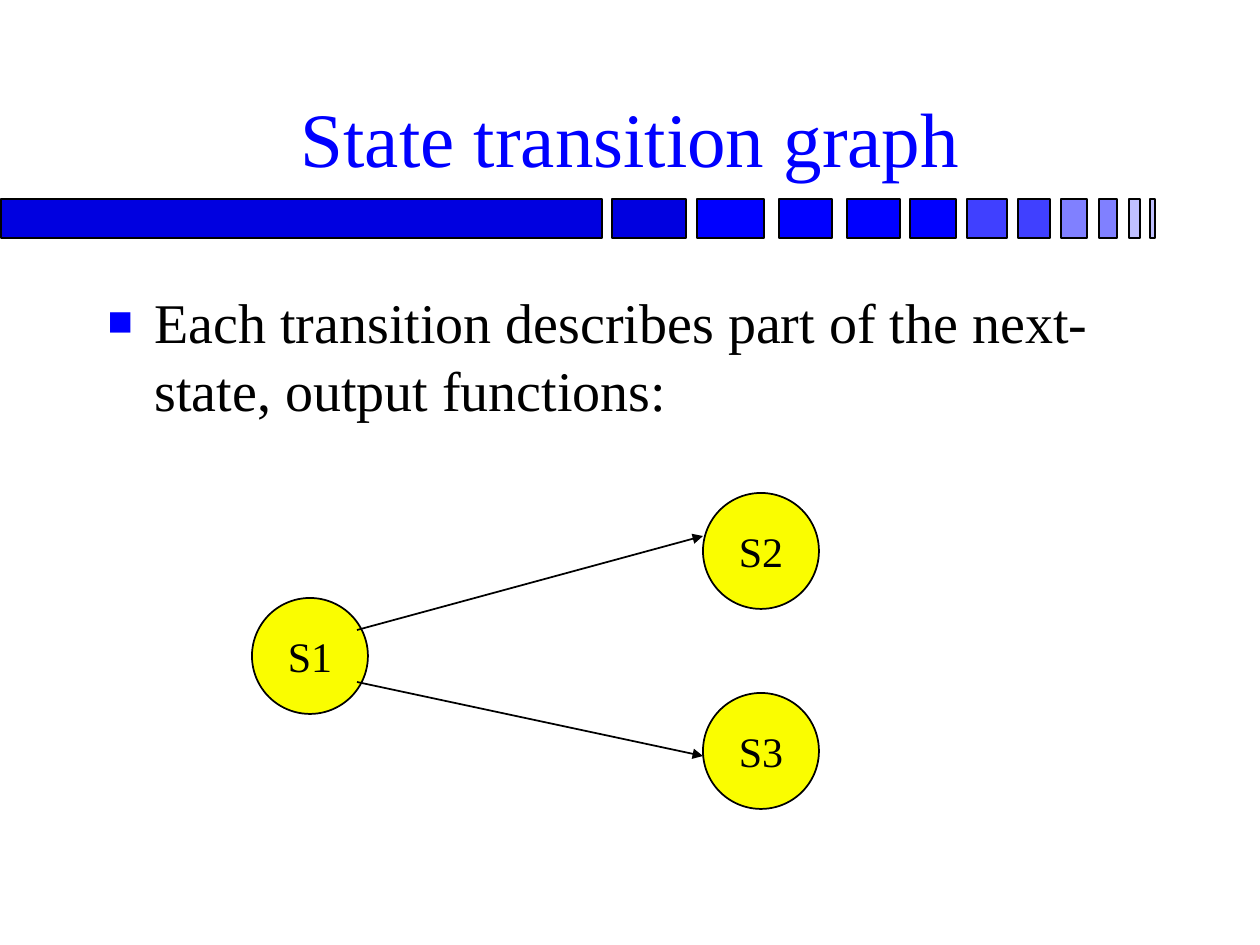
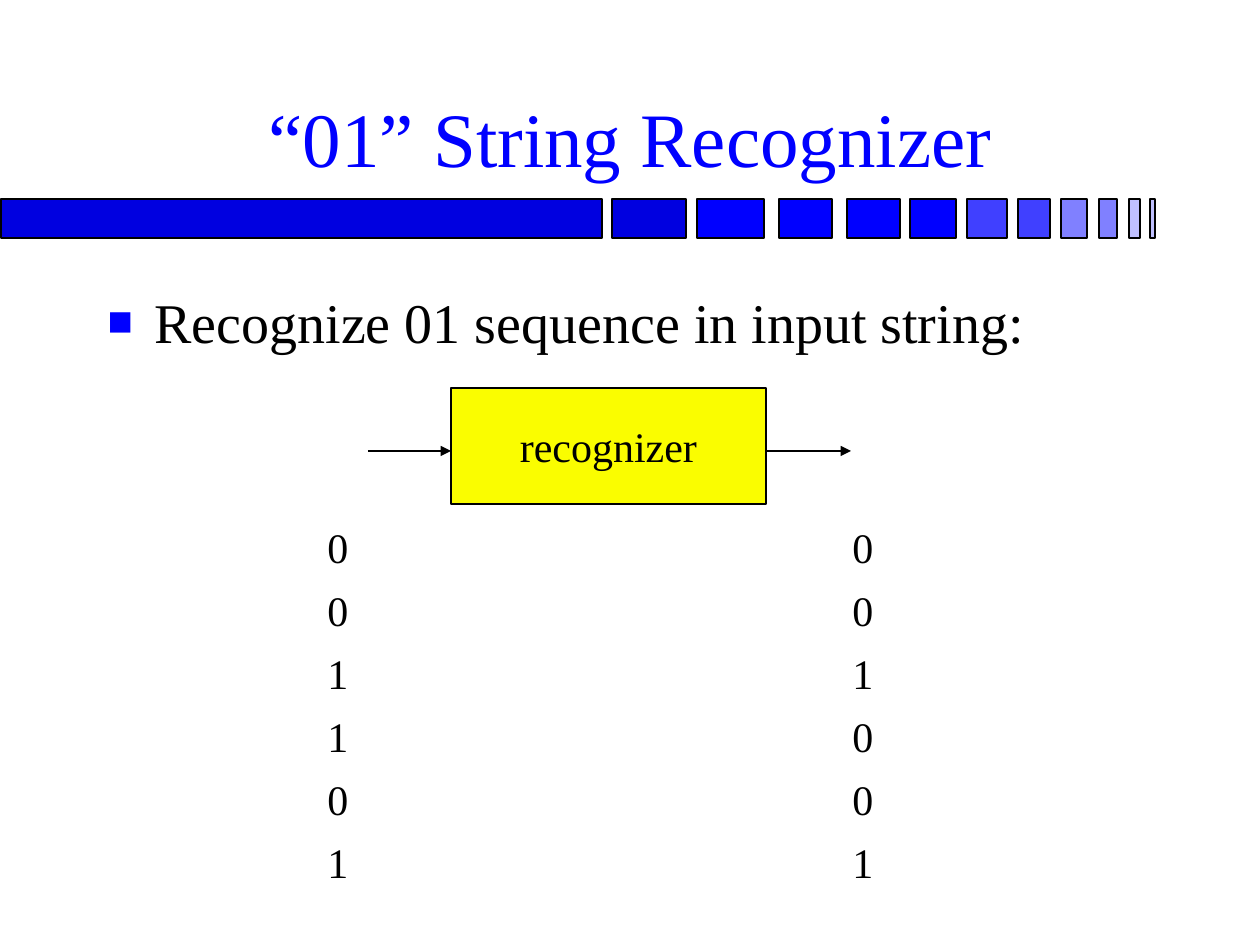
import pptx
import pptx.util
import pptx.dml.color
import pptx.enum.shapes
import pptx.enum.text
import pptx.oxml
import pptx.oxml.ns

FONT = "Times New Roman"
HEX = {"title": "0000FF", "text": "000000", "line": "000000", "node": "FAFD00",
       "navy": "0000E0", "blue": "0000FF", "mid": "4040FF", "soft": "8080FF", "pale": "C0C0FF"}
SIZE = {"title": 44, "body": 32, "label": 24}
BAND = (199, 39)
BARS = [(1, 601, "navy"), (612, 74, "navy"), (697, 67, "blue"), (779, 53, "blue"),
        (847, 53, "blue"), (910, 46, "blue"), (967, 40, "mid"), (1018, 32, "mid"),
        (1061, 26, "soft"), (1099, 18, "soft"), (1129, 11, "pale"), (1150, 5, "pale")]

GRAPH = {
    "title": "State transition graph",
    "body": ("Each transition describes part of the next-state, output functions:", 168),
    "nodes": [("OVAL", "S1", 252, 598, 116, 116), ("OVAL", "S2", 703, 493, 116, 116),
              ("OVAL", "S3", 703, 693, 116, 116)],
    "arrows": [(357, 630, 703, 536), (357, 682, 703, 756)],
    "bits": [],
}
STRING = {
    "title": "“01” String Recognizer",
    "body": ("Recognize 01 sequence in input string:", 94),
    "nodes": [("RECTANGLE", "recognizer", 451, 388, 315, 116)],
    "arrows": [(368, 451, 451, 451), (766, 451, 851, 451)],
    "bits": [(315, "001101"), (840, "001001")],
}
BIT_TOP, BIT_STEP, BIT_WIDE = 515, 63, 47

SHAPE = pptx.enum.shapes.MSO_SHAPE
ALIGN = pptx.enum.text.PP_ALIGN
ANCHOR = pptx.enum.text.MSO_ANCHOR
FIT = pptx.enum.text.MSO_AUTO_SIZE


def px(*nums):
    return [pptx.util.Emu(round(n * 914400 / 126)) for n in nums]


def rgb(name):
    return pptx.dml.color.RGBColor.from_string(HEX[name])


def tag(name, **attrs):
    node = pptx.oxml.parse_xml(f"<a:{name} {pptx.oxml.ns.nsdecls('a')}/>")
    for key, val in attrs.items():
        node.set(key, val)
    return node


def place(shape, *box):
    shape.left, shape.top, shape.width, shape.height = px(*box)


def write(shape, text, size, color="text", align=ALIGN.LEFT, anchor=ANCHOR.TOP, wrap=True):
    frame = shape.text_frame
    frame.auto_size = FIT.NONE
    frame.word_wrap = wrap
    frame.vertical_anchor = anchor
    para = frame.paragraphs[0]
    para.alignment = align
    para.space_before = pptx.util.Pt(0)
    run = para.add_run()
    run.text = text
    run.font.name = FONT
    run.font.size = pptx.util.Pt(SIZE[size])
    run.font.color.rgb = rgb(color)
    return para


def add_block(shapes, kind, fill, *box):
    shape = shapes.add_shape(kind, *px(*box))
    shape.shadow.inherit = False
    shape.fill.solid()
    shape.fill.fore_color.rgb = rgb(fill)
    shape.line.color.rgb = rgb("line")
    shape.line.width = pptx.util.Pt(1)
    return shape


def add_band(slide):
    group = slide.shapes.add_group_shape()
    top, high = BAND
    for left, wide, fill in BARS:
        add_block(group.shapes, SHAPE.RECTANGLE, fill, left, top, wide, high)


def add_body(shape, text, high):
    place(shape, 95, 273, 1071, high)
    para = write(shape, text, "body")
    shape.text_frame.margin_top = px(15)[0]
    props = para._p.get_or_add_pPr()
    hang = px(47)[0]
    props.set("marL", str(hang))
    props.set("indent", str(-hang))
    color = tag("buClr")
    color.append(tag("srgbClr", val=HEX["title"]))
    for node in (color, tag("buSzPct", val="75000"), tag("buFont", typeface=FONT),
                 tag("buChar", char="■")):
        props.append(node)


def add_arrow(slide, *ends):
    line = slide.shapes.add_connector(pptx.enum.shapes.MSO_CONNECTOR.STRAIGHT, *px(*ends))
    line.line.color.rgb = rgb("line")
    line.line.width = pptx.util.Pt(1)
    line.line._get_or_add_ln().append(tag("tailEnd", type="triangle"))
    line._element.spPr.append(tag("effectLst"))


def add_slide(deck, data):
    slide = deck.slides.add_slide(deck.slide_layouts[1])
    add_band(slide)
    title, body = slide.placeholders
    place(title, 95, 26, 1071, 163)
    write(title, data["title"], "title", "title", ALIGN.CENTER, ANCHOR.BOTTOM)
    add_body(body, *data["body"])
    for kind, text, *box in data["nodes"]:
        node = add_block(slide.shapes, SHAPE[kind], "node", *box)
        write(node, text, "label", align=ALIGN.CENTER, anchor=ANCHOR.MIDDLE, wrap=False)
    for ends in data["arrows"]:
        add_arrow(slide, *ends)
    for left, bits in data["bits"]:
        for row, bit in enumerate(bits):
            box = slide.shapes.add_textbox(*px(left, BIT_TOP + row * BIT_STEP, BIT_WIDE, BIT_STEP))
            write(box, bit, "label", wrap=False)


def main():
    deck = pptx.Presentation()
    deck.slide_width, deck.slide_height = px(1260, 945)
    for data in (GRAPH, STRING):
        add_slide(deck, data)
    deck.save("out.pptx")


if __name__ == "__main__":
    main()
